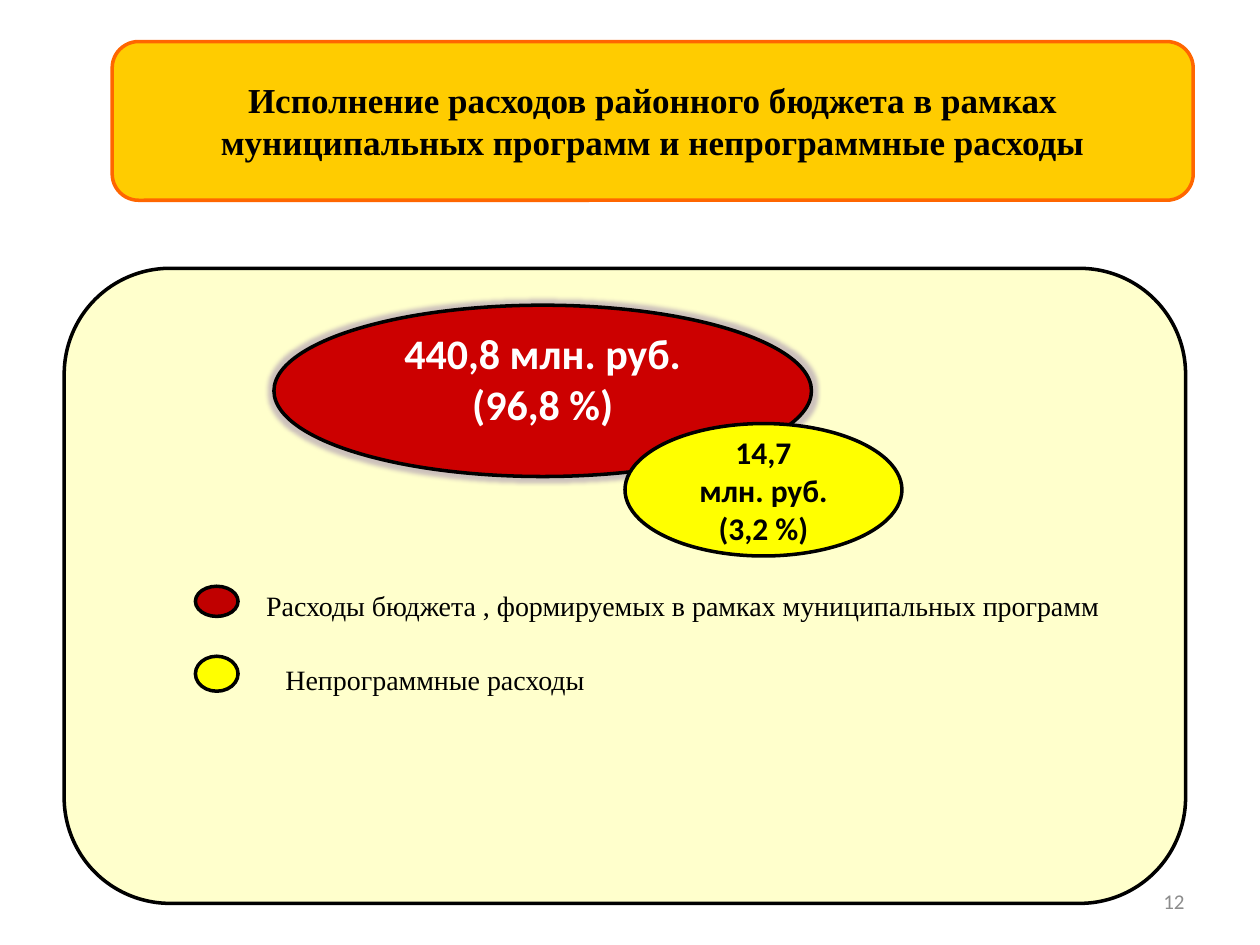
from lxml import etree
from pptx import Presentation, util as u
from pptx.dml.color import RGBColor
from pptx.enum import shapes, text
from pptx.oxml import ns

GOLD = RGBColor(0xFF, 0xCC, 0x00)
ORANGE = RGBColor(0xFF, 0x66, 0x00)
CREAM = RGBColor(0xFF, 0xFF, 0xCC)
RED = RGBColor(0xCC, 0x00, 0x00)
DARK = RGBColor(0xC0, 0x00, 0x00)
YELLOW = RGBColor(0xFF, 0xFF, 0x00)
BLACK = RGBColor(0x00, 0x00, 0x00)
WHITE = RGBColor(0xFF, 0xFF, 0xFF)
GREY = RGBColor(0x8C, 0x8C, 0x8C)
SERIF, SANS = "Times New Roman", "Calibri"
ROUND, OVAL = shapes.MSO_SHAPE.ROUNDED_RECTANGLE, shapes.MSO_SHAPE.OVAL
LEFT, MID, RIGHT = text.PP_ALIGN.LEFT, text.PP_ALIGN.CENTER, text.PP_ALIGN.RIGHT


def part(box, x, y, w, h):
    """Return the box at the given shares of an outer box."""
    left, top, wide, high = box
    return [int(n) for n in (left + x * wide, top + y * high, w * wide, h * high)]


def write(shape, words, size, font, color, align=MID, bold=False):
    """Fill a shape with text in one style."""
    frame = shape.text_frame
    frame.word_wrap = True
    frame.text = words
    for para in frame.paragraphs:
        para.alignment = align
        for run in para.runs:
            run.font.size, run.font.name = u.Pt(size), font
            run.font.bold, run.font.color.rgb = bold, color
    return frame


def draw(slide, kind, box, fill, line=BLACK):
    """Add an outlined shape without a shadow."""
    shape = slide.shapes.add_shape(kind, *box)
    shape.shadow.inherit = False
    shape.fill.solid()
    shape.fill.fore_color.rgb = fill
    shape.line.color.rgb = line
    shape.line.width = u.Pt(2)
    shape.text_frame.vertical_anchor = text.MSO_ANCHOR.MIDDLE
    return shape


def glow(shape):
    """Put a soft violet glow around a shape."""
    effects = shape.element.spPr.find(ns.qn("a:effectLst"))
    halo = etree.SubElement(effects, ns.qn("a:glow"), rad=str(u.Pt(5)))
    tint = etree.SubElement(halo, ns.qn("a:srgbClr"), val="8064A2")
    etree.SubElement(tint, ns.qn("a:alpha"), val="40000")


def number(slide, box):
    """Place the slide number."""
    label = slide.shapes.add_textbox(*box)
    write(label, "12", 12, SANS, GREY, RIGHT)
    label.text_frame.vertical_anchor = text.MSO_ANCHOR.MIDDLE


def title(slide, box):
    """Place the title banner."""
    banner = draw(slide, ROUND, box, GOLD, ORANGE)
    write(banner, "Исполнение расходов районного бюджета в рамках "
          "муниципальных программ и непрограммные расходы", 20, SERIF, BLACK, bold=True)


def shares(slide, box):
    """Place the two overlapping ovals of spending."""
    main = draw(slide, OVAL, part(box, 0, 0, 0.856, 0.683), RED)
    glow(main)
    frame = write(main, "440,8 млн. руб.\n(96,8 %)", 24, SANS, WHITE, bold=True)
    frame.margin_bottom = u.Inches(0.25)
    rest = draw(slide, OVAL, part(box, 0.559, 0.472, 0.441, 0.528), YELLOW)
    write(rest, "14,7\nмлн. руб.\n(3,2 %)", 18, SANS, BLACK, bold=True)


def legend(slide, box):
    """Place the colour keys with their labels."""
    rows = (
        (DARK, 0.035, 0.25, 0, 0.06, 0.94,
         "Расходы бюджета , формируемых в рамках муниципальных программ"),
        (YELLOW, 0.615, 0.29, 0.615, 0.08, 0.77, "Непрограммные расходы"),
    )
    for fill, y, high, top, left, wide, words in rows:
        draw(slide, OVAL, part(box, 0, y, 0.044, high), fill)
        label = slide.shapes.add_textbox(*part(box, left, top, wide, 0.385))
        write(label, words, 16, SERIF, BLACK, LEFT)


def panel(slide, box):
    """Place the cream panel with its ovals and legend."""
    draw(slide, ROUND, box, CREAM)
    shares(slide, part(box, 0.187, 0.058, 0.56, 0.395))
    legend(slide, part(box, 0.117, 0.494, 0.865, 0.19))


def main():
    """Build and save the slide."""
    deck = Presentation()
    deck.slide_width, deck.slide_height = u.Inches(10), u.Inches(7.5)
    slide = deck.slides.add_slide(deck.slide_layouts[6])
    page = (0, 0, deck.slide_width, deck.slide_height)
    number(slide, part(page, 0.717, 0.927, 0.233, 0.053))
    title(slide, part(page, 0.089, 0.044, 0.858, 0.168))
    panel(slide, part(page, 0.051, 0.284, 0.89, 0.672))
    deck.save("out.pptx")


if __name__ == "__main__":
    main()
